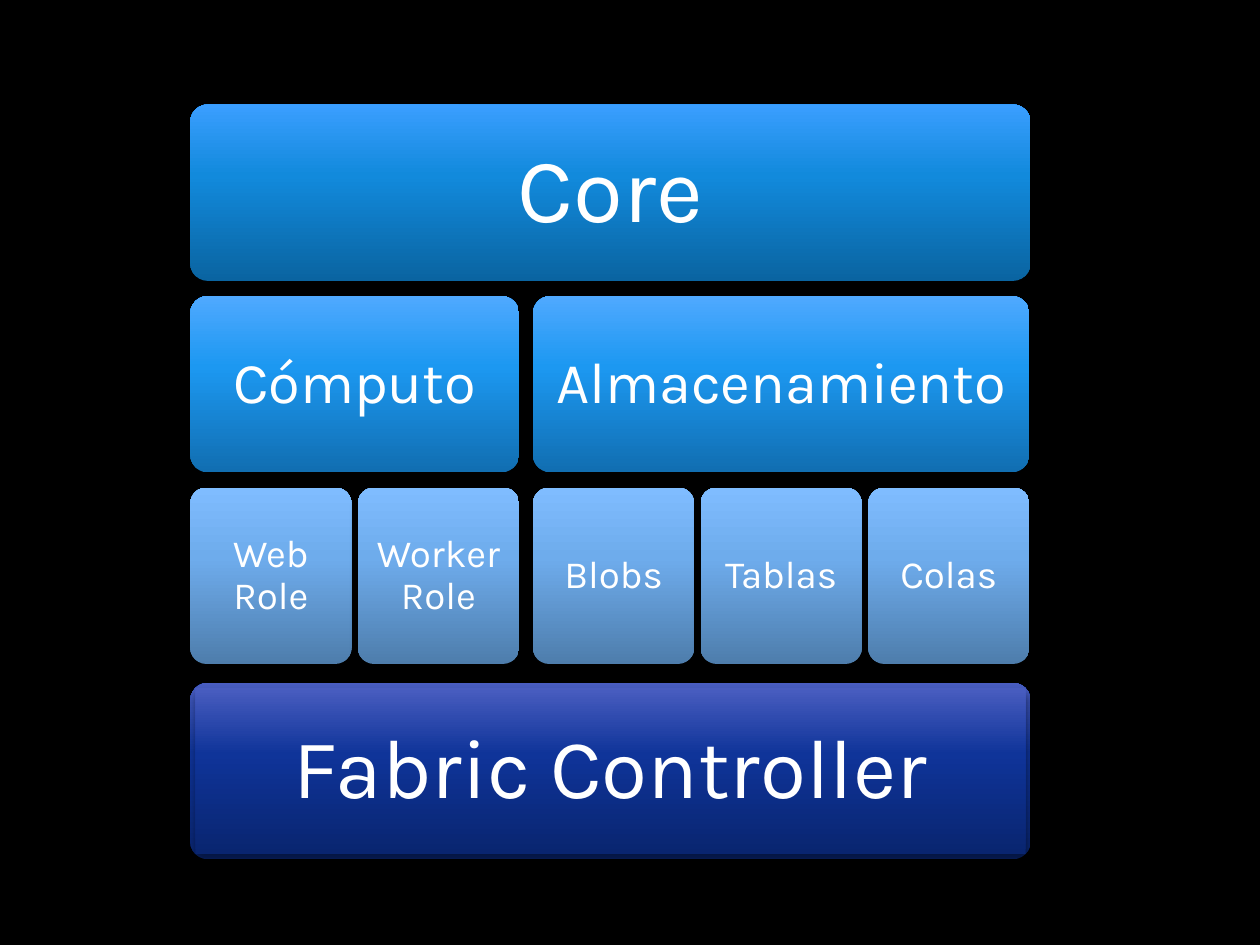
import copy

import pptx
import pptx.dml.color
import pptx.enum.shapes
import pptx.enum.text
import pptx.oxml
import pptx.oxml.ns
import pptx.util

Inches = pptx.util.Inches
RGBColor = pptx.dml.color.RGBColor
SHAPES = pptx.enum.shapes.MSO_SHAPE

BLACK = RGBColor(0x00, 0x00, 0x00)
WHITE = RGBColor(0xFF, 0xFF, 0xFF)
# Gradients run from the bottom of a block to its top
CORE_BLUES = [RGBColor(0x0A, 0x64, 0xA1), RGBColor(0x12, 0x8A, 0xDC), RGBColor(0x3A, 0x9E, 0xFF)]
SERVICE_BLUES = [RGBColor(0x11, 0x6E, 0xB1), RGBColor(0x1C, 0x98, 0xF1), RGBColor(0x4F, 0xA9, 0xFF)]
PART_BLUES = [RGBColor(0x4E, 0x7D, 0xAC), RGBColor(0x6E, 0xAC, 0xEC), RGBColor(0x7F, 0xBC, 0xFF)]
FABRIC_BLUES = [RGBColor(0x09, 0x25, 0x70), RGBColor(0x0F, 0x34, 0x99), RGBColor(0x49, 0x5D, 0xC0)]
STOP_POSITIONS = [0, 0.6, 1]

FONT = "Karla"
BLOCK_HEIGHT = 1.4
ROW_PITCH = 1.52
PART_WIDTH = 1.28
PART_GAP = 0.05
SERVICE_GAP = 0.11
EDGE = 0.04  # distance from a block to its label

SERVICES = [
    ("Cómputo", ["Web Role", "Worker Role"]),
    ("Almacenamiento", ["Blobs", "Tablas", "Colas"]),
]

SHADOW = (
    '<a:outerShdw %s blurRad="66040" dist="38100" dir="5400000" rotWithShape="0">'
    '<a:srgbClr val="000000"><a:alpha val="40000"/></a:srgbClr></a:outerShdw>'
    % pptx.oxml.ns.nsdecls("a")
)


def add_panel(group, kind, left, top, width, height, colours):
    """Add a borderless gradient shape with a soft shadow."""
    panel = group.shapes.add_shape(kind, Inches(left), Inches(top), Inches(width), Inches(height))
    panel.line.fill.background()
    panel.fill.gradient()
    panel.fill.gradient_angle = 90
    stop_list = panel.fill._fill._gradFill.gsLst
    stop_list.append(copy.deepcopy(stop_list[-1]))
    for stop, position, colour in zip(panel.fill.gradient_stops, STOP_POSITIONS, colours):
        stop.position = position
        stop.color.rgb = colour
    panel.shadow.inherit = False
    effects = panel._element.spPr.find(pptx.oxml.ns.qn("a:effectLst"))
    effects.append(pptx.oxml.parse_xml(SHADOW))
    return panel


def write_label(box, text, size, inset):
    """Write centred white text into a box."""
    frame = box.text_frame
    frame.word_wrap = True
    frame.vertical_anchor = pptx.enum.text.MSO_ANCHOR.MIDDLE
    frame.margin_left = frame.margin_right = Inches(inset)
    frame.margin_top = frame.margin_bottom = Inches(inset)
    frame.text = text
    para = frame.paragraphs[0]
    para.alignment = pptx.enum.text.PP_ALIGN.CENTER
    para.line_spacing = 0.9
    para.font.name = FONT
    para.font.size = pptx.util.Pt(size)
    para.font.color.rgb = WHITE


def add_block(group, text, left, top, width, colours, size, inset, inner_panel=False):
    """Add a rounded block and the label that lies inside it."""
    outline = add_panel(group, SHAPES.ROUNDED_RECTANGLE, left, top, width, BLOCK_HEIGHT, colours)
    outline.adjustments[0] = 0.1
    inner = (left + EDGE, top + EDGE, width - 2 * EDGE, BLOCK_HEIGHT - 2 * EDGE)
    if inner_panel:
        label = add_panel(group, SHAPES.RECTANGLE, *inner, colours)
    else:
        label = group.shapes.add_textbox(*map(Inches, inner))
    write_label(label, text, size, inset)


def add_hierarchy(page, left, top, width):
    """Place the core, its services and their parts in three rows."""
    group = page.shapes.add_group_shape()
    add_block(group, "Core", left, top, width, CORE_BLUES, 52, 0.22)
    service_top = top + ROW_PITCH
    part_top = service_top + ROW_PITCH
    for service, parts in SERVICES:
        service_width = len(parts) * (PART_WIDTH + PART_GAP) - PART_GAP
        add_block(group, service, left, service_top, service_width, SERVICE_BLUES, 33, 0.13)
        for index, part in enumerate(parts):
            part_left = left + index * (PART_WIDTH + PART_GAP)
            add_block(group, part, part_left, part_top, PART_WIDTH, PART_BLUES, 22, 0.09)
        left += service_width + SERVICE_GAP


def add_fabric(page, left, top, width):
    """Place the base block under the hierarchy."""
    group = page.shapes.add_group_shape()
    add_block(group, "Fabric Controller", left, top, width, FABRIC_BLUES, 48, 0.24, inner_panel=True)


def main():
    deck = pptx.Presentation()
    deck.slide_width = Inches(10)
    deck.slide_height = Inches(7.5)
    page = deck.slides.add_slide(deck.slide_layouts[6])
    page.background.fill.solid()
    page.background.fill.fore_color.rgb = BLACK

    add_hierarchy(page, 1.51, 0.83, 6.67)
    add_fabric(page, 1.51, 5.42, 6.67)
    deck.save("out.pptx")


if __name__ == "__main__":
    main()
